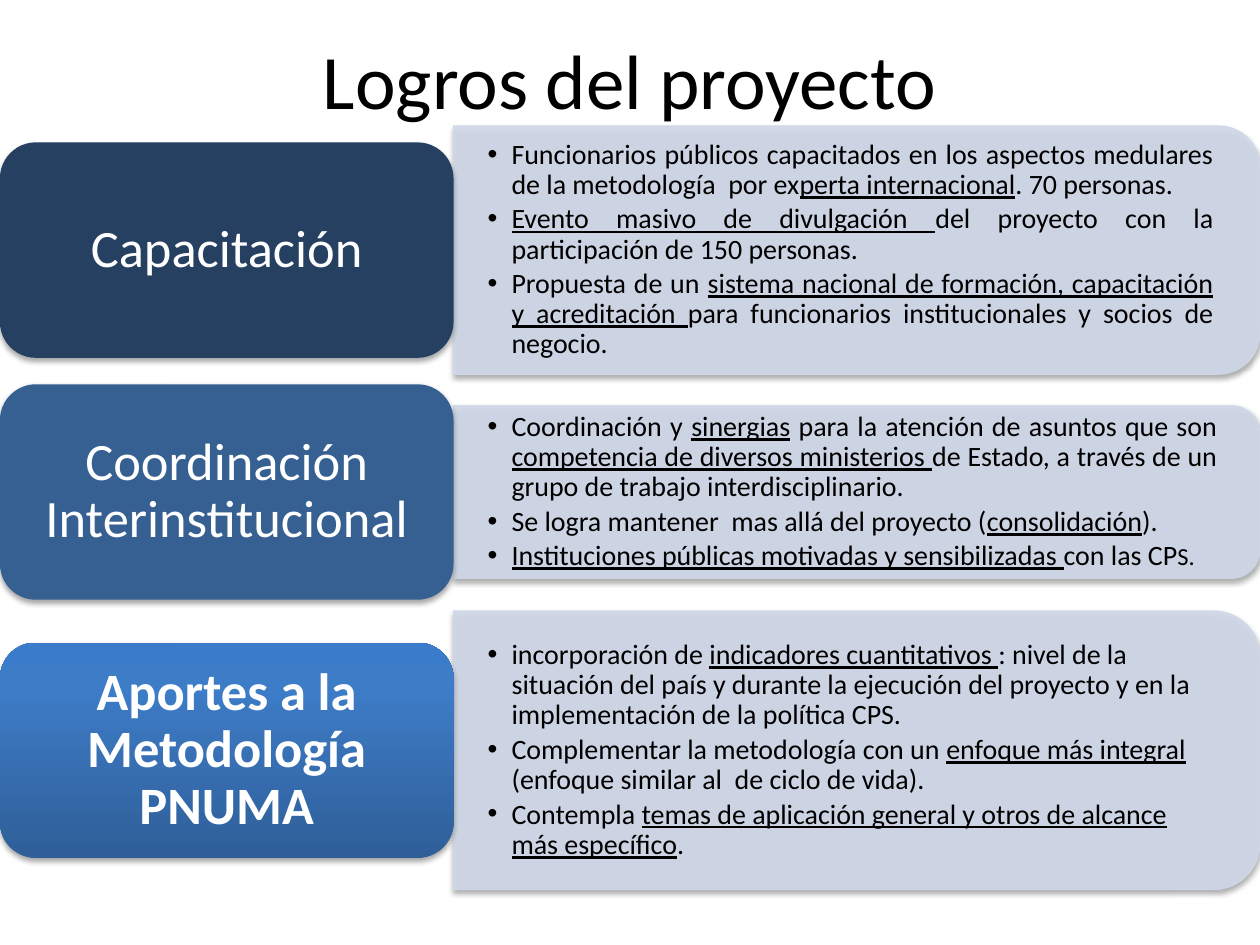
from copy import deepcopy
from dataclasses import dataclass

from lxml import etree
from pptx import Presentation
from pptx.dml.color import RGBColor as Rgb
from pptx.enum.shapes import MSO_SHAPE as Shape
from pptx.enum.text import MSO_ANCHOR as Anchor, PP_ALIGN as Align
from pptx.oxml.ns import qn
from pptx.util import Inches, Pt


@dataclass(frozen=True)
class Theme:
    font: str = "Calibri"
    ink: Rgb = Rgb.from_string("000000")
    label_ink: Rgb = Rgb.from_string("FFFFFF")
    panel: Rgb = Rgb.from_string("D0D8E8")
    navy: str = "254061"
    blue: str = "376092"
    gradient: tuple = ((0, "2F5F99"), (0.8, "3D7CC7"), (1, "3A7CCB"))
    title_size: int = 44
    label_size: int = 30
    body_size: int = 16
    small_size: int = 14


theme = Theme()


def add_child(parent, tag, **attributes):
    child = etree.SubElement(parent, qn(tag))
    for name, value in attributes.items():
        child.set(name, str(value))
    return child


def add_shadow(shape):
    shape.shadow.inherit = False
    effects = shape._element.spPr.find(qn("a:effectLst"))
    shadow = add_child(effects, "a:outerShdw", blurRad=Pt(3.1), dist=Pt(1.8),
                       dir=90 * 60000, rotWithShape=0)
    add_child(add_child(shadow, "a:srgbClr", val="000000"), "a:alpha", val=35000)


# Each row: label, fill, bold, label top, panel top, panel height, alignment, bullets.
# Text between underscores is underlined; text after a bar is smaller.
rows = [
    ("Capacitación", theme.navy, False, 1.13, 1.0, 1.97, Align.JUSTIFY, [
        "Funcionarios públicos capacitados en los aspectos medulares de la "
        "metodología  por ex_perta internacional_. 70 personas.",
        "_Evento masivo de divulgación _del proyecto con la participación de "
        "150 personas.",
        "Propuesta de un _sistema nacional de formación, capacitación y "
        "acreditación _para funcionarios institucionales y socios de negocio.",
    ]),
    ("Coordinación Interinstitucional", theme.blue, False, 3.05, 3.22, 1.37, Align.JUSTIFY, [
        "Coordinación y _sinergias_ para la atención de asuntos que son "
        "_competencia de diversos ministerios _de Estado, a través de un grupo "
        "de trabajo interdisciplinario.",
        "Se logra mantener  mas allá del proyecto (_consolidación_).",
        "_Instituciones públicas motivadas y sensibilizadas _con las CP|S.",
    ]),
    ("Aportes a la Metodología PNUMA", theme.gradient, True, 5.1, 4.85, 2.21, Align.LEFT, [
        "incorporación de _indicadores cuantitativos _: nivel de la situación "
        "del país y durante la ejecución del proyecto y en la implementación "
        "de la política CPS.",
        "Complementar la metodología con un _enfoque más integral _(enfoque "
        "similar al  de ciclo de vida).",
        "Contempla _temas de aplicación general y otros de alcance más "
        "específico_.",
    ]),
]
label_width, label_height = 3.6, 1.71
panel_width = 6.4
corner_inset = 0.05  # share of the panel height kept clear of text

deck = Presentation()
deck.slide_width, deck.slide_height = Inches(10), Inches(7.5)
page = deck.slides.add_slide(deck.slide_layouts[5])

# Title
title = page.shapes.title
title.left, title.top, title.width, title.height = (
    Inches(0.5), Inches(0), Inches(9), Inches(1.25))
title.text_frame.vertical_anchor = Anchor.MIDDLE
para = title.text_frame.paragraphs[0]
para.text = "Logros del proyecto"
para.alignment = Align.CENTER
para.font.name, para.font.size = theme.font, Pt(theme.title_size)
para.font.color.rgb = theme.ink

for label, fill, bold, label_top, panel_top, panel_height, alignment, bullets in rows:
    # Panel: a shape with two round top corners, turned to the right
    center_x = label_width + panel_width / 2
    center_y = panel_top + panel_height / 2
    panel = page.shapes.add_shape(
        Shape.ROUND_2_SAME_RECTANGLE,
        Inches(center_x - panel_height / 2), Inches(center_y - panel_width / 2),
        Inches(panel_height), Inches(panel_width))
    panel.rotation = 90
    panel.fill.solid()
    panel.fill.fore_color.rgb = theme.panel
    panel.line.color.rgb = theme.panel
    panel.line.width = Pt(0.75)
    for color in panel._element.spPr.iter(qn("a:srgbClr")):
        add_child(color, "a:alpha", val=90000)
    add_shadow(panel)

    # Bullets
    inset = corner_inset * panel_height
    box = page.shapes.add_textbox(
        Inches(label_width), Inches(panel_top + inset),
        Inches(panel_width - inset), Inches(panel_height - 2 * inset))
    frame = box.text_frame
    frame.word_wrap = True
    frame.vertical_anchor = Anchor.MIDDLE
    frame.margin_left = frame.margin_right = Inches(0.27)
    frame.margin_top = frame.margin_bottom = Inches(0.14)
    for index, bullet in enumerate(bullets):
        para = frame.add_paragraph() if index else frame.paragraphs[0]
        para.level = 1
        para.alignment = alignment
        para.line_spacing = 0.9
        para.space_after = Pt(2.4)
        properties = para._p.get_or_add_pPr()
        properties.set("marL", str(Inches(0.19)))
        properties.set("indent", str(-Inches(0.19)))
        add_child(properties, "a:buFont", typeface="Arial")
        add_child(properties, "a:buChar", char="•")
        para.font.name, para.font.size = theme.font, Pt(theme.body_size)
        para.font.color.rgb = theme.ink
        body, _, small = bullet.partition("|")
        for position, piece in enumerate(body.split("_")):
            if piece:
                span = para.add_run()
                span.text = piece
                if position % 2:
                    span.font.underline = True
        if small:
            span = para.add_run()
            span.text = small
            span.font.size = Pt(theme.small_size)

    # Label
    tile = page.shapes.add_shape(
        Shape.ROUNDED_RECTANGLE, Inches(0), Inches(label_top),
        Inches(label_width), Inches(label_height))
    if isinstance(fill, str):
        tile.fill.solid()
        tile.fill.fore_color.rgb = Rgb.from_string(fill)
    else:
        tile.fill.gradient()
        tile.fill.gradient_angle = 90
        stop_list = tile._element.spPr.find(".//" + qn("a:gsLst"))
        stop_list.append(deepcopy(stop_list[-1]))
        for stop, (position, color) in zip(tile.fill.gradient_stops, fill):
            stop.position = position
            stop.color.rgb = Rgb.from_string(color)
    tile.line.fill.background()
    add_shadow(tile)
    frame = tile.text_frame
    frame.word_wrap = True
    frame.vertical_anchor = Anchor.MIDDLE
    frame.margin_left = frame.margin_right = Inches(0.12)
    frame.margin_top = frame.margin_bottom = Inches(0.06)
    para = frame.paragraphs[0]
    para.text = label
    para.alignment = Align.CENTER
    para.line_spacing = 0.9
    para.font.name, para.font.size = theme.font, Pt(theme.label_size)
    para.font.bold = bold
    para.font.color.rgb = theme.label_ink

deck.save("out.pptx")
